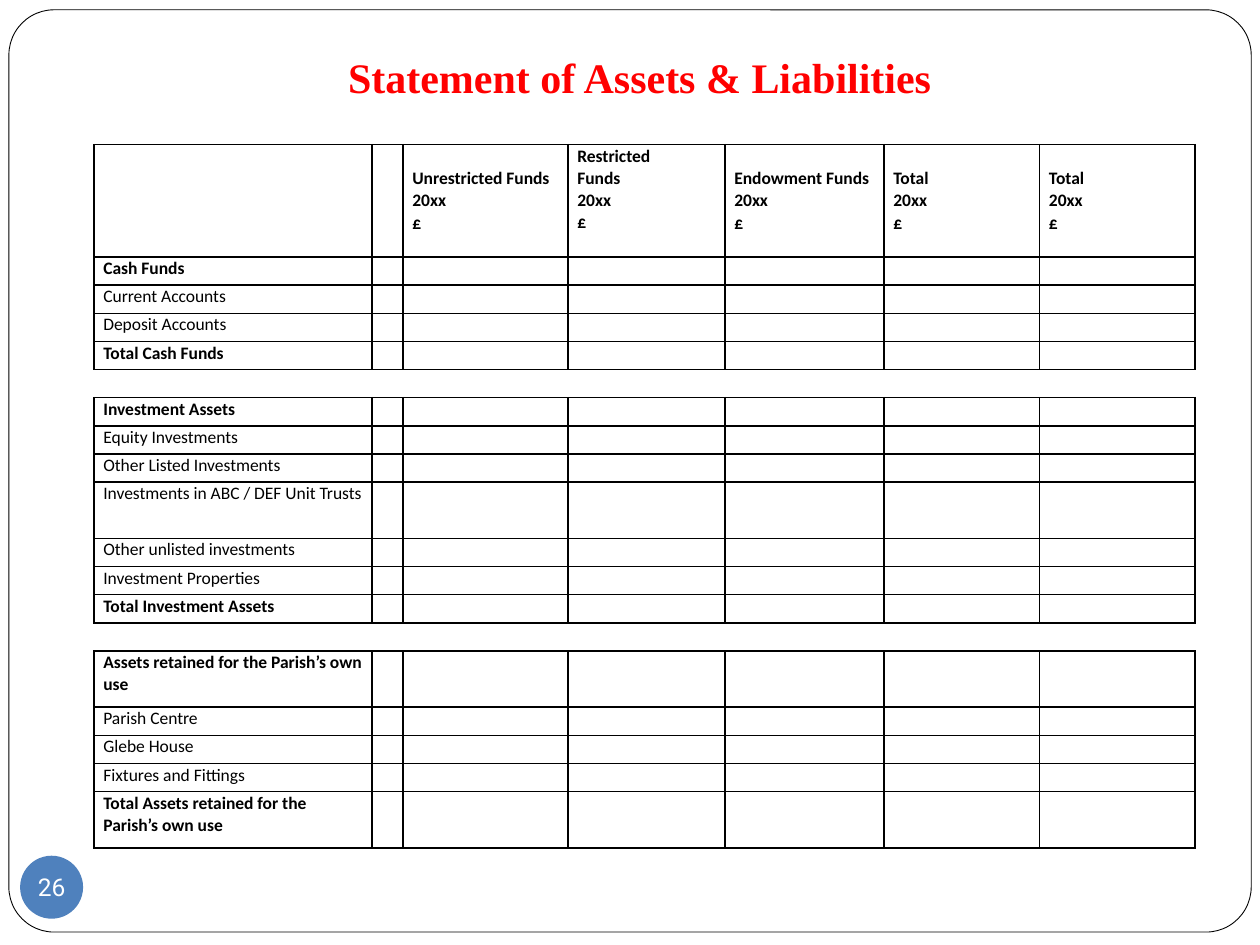
from lxml import etree
from pptx import Presentation
from pptx.dml.color import RGBColor
from pptx.enum import shapes, text
from pptx.oxml.ns import qn
from pptx.util import Pt

BLACK = RGBColor(0, 0, 0)
WHITE = RGBColor(255, 255, 255)
RED = RGBColor(255, 0, 0)
BLUE = RGBColor(0x4F, 0x81, 0xBD)

TITLE = "Statement of Assets & Liabilities"
PAGE = "26"
YEAR = ["20xx", "£"]
# Heading lines and the number of lines left free above them
HEADS = [
    ([], 0),
    ([], 0),
    (["Unrestricted Funds"] + YEAR, 1),
    (["Restricted", "Funds"] + YEAR, 0),
    (["Endowment Funds"] + YEAR, 1),
    (["Total"] + YEAR, 1),
    (["Total"] + YEAR, 1),
]
# In each group the first and last rows are bold
GROUPS = [
    ["Cash Funds", "Current Accounts", "Deposit Accounts", "Total Cash Funds"],
    ["Investment Assets", "Equity Investments", "Other Listed Investments",
     "Investments in ABC / DEF Unit Trusts", "Other unlisted investments",
     "Investment Properties", "Total Investment Assets"],
    ["Assets retained for the Parish’s own use", "Parish Centre",
     "Glebe House", "Fixtures and Fittings",
     "Total Assets retained for the Parish’s own use"],
]
WIDTHS = [158.9, 17.7, 94.3, 89.7, 90.9, 88.9, 88.9]
LEFT, TOP = 53.7, 82.6
HEAD, ROW, LINE = 64.3, 16.1, 12.8
LONG = 32  # labels longer than this get a double row


def write(frame, lines, size=10, font="Calibri", color=BLACK, bold=False,
          align=None, space=None):
    for i, line in enumerate(lines):
        para = frame.paragraphs[0] if i == 0 else frame.add_paragraph()
        para.alignment = align
        para.line_spacing = space
        run = para.add_run()
        run.text = line
        run.font.size = Pt(size)
        run.font.name = font
        run.font.bold = bold
        run.font.color.rgb = color


def style(cell, gap):
    """Clear the fill, rule the cell, and open the sides of a gap row."""
    cell.margin_left = cell.margin_right = Pt(5.4)
    cell.margin_top = cell.margin_bottom = 0
    props = cell._tc.get_or_add_tcPr()
    for side in "LRTB":
        edge = etree.SubElement(props, qn("a:ln" + side), w=str(Pt(1)))
        if gap and side in "LR":
            etree.SubElement(edge, qn("a:noFill"))
        else:
            fill = etree.SubElement(edge, qn("a:solidFill"))
            etree.SubElement(fill, qn("a:srgbClr"), val=str(BLACK))
    cell.fill.background()
    # Keep empty cells from growing the row
    para = cell.text_frame.paragraphs[0]._p
    if not cell.text:
        etree.SubElement(para, qn("a:endParaRPr"), sz="1000")


def shape(slide, kind, box, fill):
    item = slide.shapes.add_shape(kind, *map(Pt, box))
    item.shadow.inherit = False
    item.fill.solid()
    item.fill.fore_color.rgb = fill
    return item


def main():
    deck = Presentation()
    deck.slide_width, deck.slide_height = Pt(720), Pt(540)
    slide = deck.slides.add_slide(deck.slide_layouts[6])

    # Rounded frame
    frame = shape(slide, shapes.MSO_SHAPE.ROUNDED_RECTANGLE,
                  (5.1, 5.6, 709.9, 527), WHITE)
    frame.adjustments[0] = 0.049
    frame.line.color.rgb = BLACK
    frame.line.width = Pt(0.5)

    # Page number
    badge = shape(slide, shapes.MSO_SHAPE.OVAL, (11.5, 489, 36, 36), BLUE)
    badge.line.fill.background()
    body = badge.text_frame
    body.margin_left = body.margin_right = 0
    body.margin_top = body.margin_bottom = 0
    body.word_wrap = False
    body.vertical_anchor = text.MSO_ANCHOR.MIDDLE
    write(body, [PAGE], size=14, font="Roboto", color=WHITE,
          align=text.PP_ALIGN.CENTER)

    # Row labels with weights; None marks a gap between groups
    rows = []
    for group in GROUPS:
        if rows:
            rows.append((None, False))
        rows += [(name, name in (group[0], group[-1])) for name in group]
    highs = [HEAD] + [ROW * (2 if name and len(name) > LONG else 1)
                      for name, bold in rows]

    # Table
    table = slide.shapes.add_table(
        len(highs), len(WIDTHS), Pt(LEFT), Pt(TOP),
        Pt(sum(WIDTHS)), Pt(sum(highs))).table
    table.first_row = table.horz_banding = False
    for col, wide in zip(table.columns, WIDTHS):
        col.width = Pt(wide)
    for row, high in zip(table.rows, highs):
        row.height = Pt(high)
    for i, (name, bold) in enumerate(rows, 1):
        if name:
            write(table.cell(i, 0).text_frame, [name], bold=bold, space=1.05)
    for j, (lines, skip) in enumerate(HEADS):
        write(table.cell(0, j).text_frame, lines, bold=True, space=1.05)
    for i, row in enumerate(table.rows):
        for cell in row.cells:
            style(cell, i > 0 and rows[i - 1][0] is None)
    for j, (lines, skip) in enumerate(HEADS):
        table.cell(0, j).margin_top = Pt(skip * LINE)

    # Title
    title = slide.shapes.add_textbox(Pt(47.5), Pt(26), Pt(636), Pt(36))
    title.text_frame.word_wrap = True
    write(title.text_frame, [TITLE], size=24, font="Times New Roman",
          color=RED, bold=True, align=text.PP_ALIGN.CENTER)

    deck.save("out.pptx")


if __name__ == "__main__":
    main()
